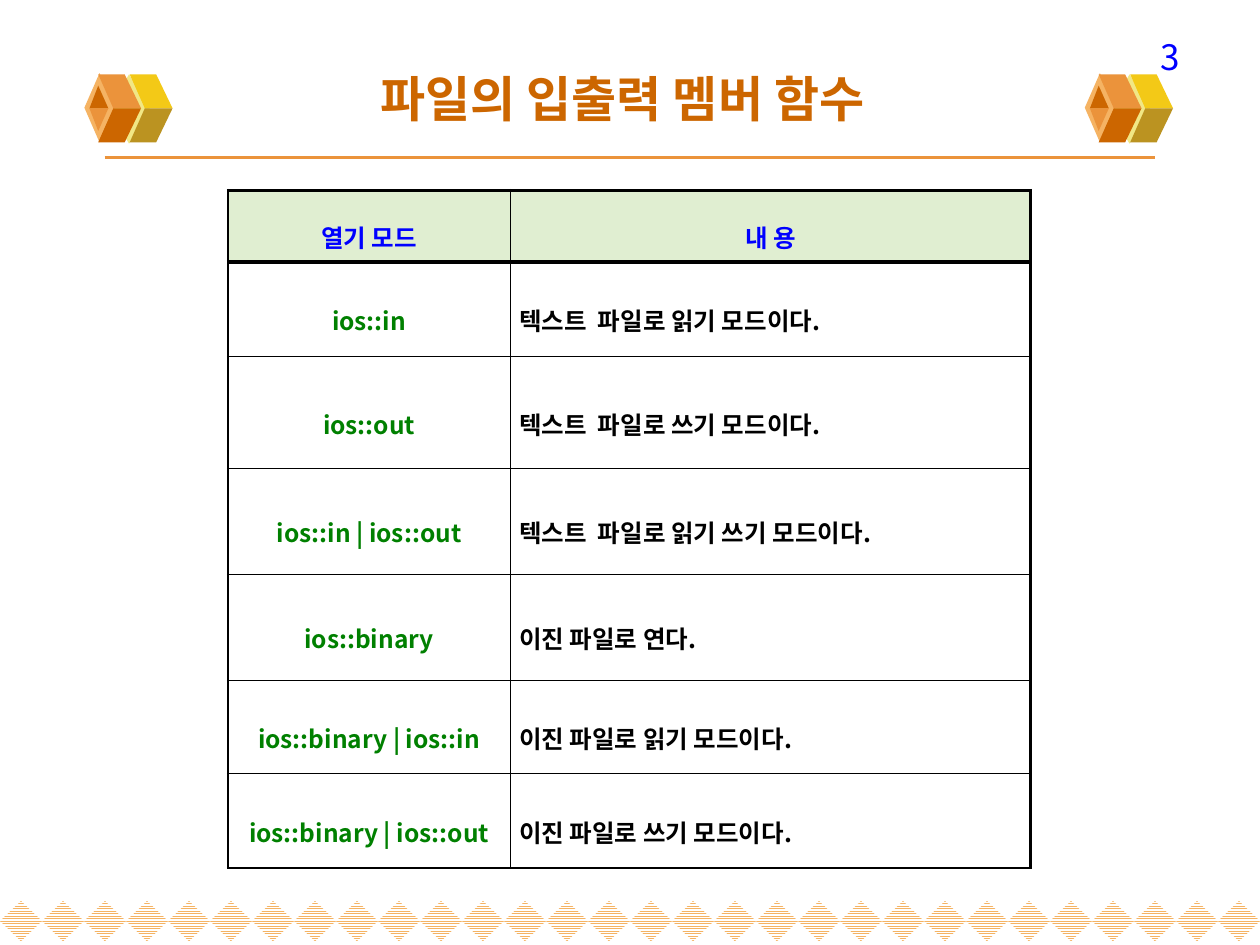
from dataclasses import dataclass

from lxml.etree import SubElement as Sub
from pptx import Presentation
from pptx.dml.color import RGBColor as Rgb
from pptx.enum.dml import MSO_PATTERN as Pat
from pptx.enum.shapes import MSO_CONNECTOR as Conn, MSO_SHAPE as Kind
from pptx.enum.text import MSO_ANCHOR as Anchor, PP_ALIGN as Align
from pptx.oxml.ns import qn
from pptx.util import Inches, Pt


@dataclass(frozen=True)
class Theme:
    face: str = "Noto Sans CJK KR"
    black: str = "000000"
    white: str = "FFFFFF"
    blue: str = "0000FF"
    green: str = "008000"
    mint: str = "E0EED1"
    rust: str = "CC6600"
    orange: str = "EB933B"
    peach: str = "F5B363"
    cream: str = "F1E785"
    yellow: str = "F3C917"
    olive: str = "BB9321"
    title: int = 28
    number: int = 20
    body: int = 14
    rule: float = 2.25
    thin: float = 0.28
    frame: float = 1.7
    head: float = 1.98


class Deck:
    def __init__(self, slide, theme):
        self.slide = slide
        self.shapes = slide.shapes
        self.theme = theme

    def text(self, frame, words, size, color, align, bold=True, space=None):
        para = frame.paragraphs[0]
        para.text = words
        para.alignment = align
        if space:
            para.line_spacing = space
        font = para.font
        font.size = Pt(size)
        font.bold = bold
        font.color.rgb = Rgb.from_string(color)
        font.name = self.theme.face
        props = para._p.pPr.find(qn("a:defRPr"))
        Sub(props, qn("a:ea"), typeface=self.theme.face)

    def label(self, box, words, size, color, align, anchor, bold=True):
        frame = self.shapes.add_textbox(*map(Inches, box)).text_frame
        frame.word_wrap = True
        frame.vertical_anchor = anchor
        frame.margin_top = frame.margin_bottom = 0
        self.text(frame, words, size, color, align, bold)

    def paint(self, shape, color):
        shape.shadow.inherit = False
        shape.line.fill.background()
        shape.fill.solid()
        shape.fill.fore_color.rgb = Rgb.from_string(color)

    def gem(self, box, color):
        shape = self.shapes.add_shape(Kind.DIAMOND, *map(Inches, box))
        self.paint(shape, color)
        return shape

    def weave(self, box):
        fill = self.gem(box, self.theme.peach).fill
        fill.patterned()
        fill.pattern = Pat.NARROW_HORIZONTAL
        fill.fore_color.rgb = Rgb.from_string(self.theme.peach)
        fill.back_color.rgb = Rgb.from_string(self.theme.white)

    def facet(self, left, points, color):
        spots = [(Inches(left + x), Inches(y)) for x, y in points]
        pen = self.shapes.build_freeform(*spots[0])
        pen.add_line_segments(spots[1:], close=True)
        self.paint(pen.convert_to_shape(), color)

    def rule(self, left, right, top):
        line = self.shapes.add_connector(
            Conn.STRAIGHT, Inches(left), Inches(top), Inches(right), Inches(top))
        line.line.color.rgb = Rgb.from_string(self.theme.orange)
        line.line.width = Pt(self.theme.rule)
        Sub(line._element.spPr, qn("a:effectLst"))

    def cube(self, left):
        hue = self.theme
        top, mid, base = 0.59, 0.86, 1.13

        def slant(x, edge, color):
            self.facet(left, [(x + 0.12, mid), (x + 0.34, mid),
                              (x + 0.21, edge), (x, edge)], color)

        def wedge(tip, color):
            self.facet(left, [(0.11, tip), (0.04, mid), (0.19, mid)], color)

        self.gem((left + 0.19, top, 0.33, 0.55), hue.cream)
        slant(0.36, top, hue.yellow)
        slant(0.36, base, hue.olive)
        self.gem((left, 0.58, 0.24, 0.55), hue.peach)
        slant(0.11, top, hue.orange)
        slant(0.11, base, hue.rust)
        wedge(0.68, hue.rust)
        wedge(1.04, hue.orange)

    def border(self, cell, widths):
        props = cell._tc.get_or_add_tcPr()
        for side, width in zip("LRTB", widths):
            line = Sub(props, qn(f"a:ln{side}"), w=str(int(Pt(width))))
            fill = Sub(line, qn("a:solidFill"))
            Sub(fill, qn("a:srgbClr"), val=self.theme.black)

    def cell(self, cell, words, color, align, widths, fill=None):
        self.border(cell, widths)
        if fill:
            cell.fill.solid()
            cell.fill.fore_color.rgb = Rgb.from_string(fill)
        else:
            cell.fill.background()
        cell.vertical_anchor = Anchor.MIDDLE
        cell.margin_left = cell.margin_right = Inches(0.07)
        cell.margin_top = cell.margin_bottom = Inches(0.02)
        self.text(cell.text_frame, words, self.theme.body, color, align, space=1.6)

    def table(self, left, top, cols, highs, rows):
        hue = self.theme
        grid = self.shapes.add_table(
            len(rows), len(cols), Inches(left), Inches(top),
            Inches(sum(cols)), Inches(sum(highs))).table
        grid.first_row = grid.horz_banding = False
        for col, width in zip(grid.columns, cols):
            col.width = Inches(width)
        for row, height in zip(grid.rows, highs):
            row.height = Inches(height)
        flat = [hue.frame, hue.head] + [hue.thin] * (len(rows) - 2) + [hue.frame]
        sides = [hue.frame, hue.thin, hue.frame]
        for r, row in enumerate(rows):
            for c, words in enumerate(row):
                color = hue.blue if r == 0 else (hue.green, hue.black)[c]
                align = Align.JUSTIFY if r and c else Align.CENTER
                widths = sides[c], sides[c + 1], flat[r], flat[r + 1]
                fill = hue.mint if r == 0 else None
                self.cell(grid.cell(r, c), words, color, align, widths, fill)


ROWS = [
    ("열기 모드", "내 용"),
    ("ios::in", "텍스트  파일로 읽기 모드이다."),
    ("ios::out", "텍스트  파일로 쓰기 모드이다."),
    ("ios::in | ios::out", "텍스트  파일로 읽기 쓰기 모드이다."),
    ("ios::binary", "이진 파일로 연다."),
    ("ios::binary | ios::in", "이진 파일로 읽기 모드이다."),
    ("ios::binary | ios::out", "이진 파일로 쓰기 모드이다."),
]
HIGHS = [0.57, 0.75, 0.89, 0.84, 0.84, 0.74, 0.75]


def main():
    show = Presentation()
    show.slide_width, show.slide_height = Inches(10), Inches(7.5)
    theme = Theme()
    deck = Deck(show.slides.add_slide(show.slide_layouts[6]), theme)
    count = 30
    step = 10 / count
    for i in range(count):
        deck.weave((i * step, 7.15, step, 0.32))
    deck.rule(0.83, 9.17, 1.25)
    for left in (0.67, 8.61):
        deck.cube(left)
    deck.label((7.13, 0.28, 2.33, 0.3), "3", theme.number, theme.blue,
               Align.RIGHT, Anchor.TOP, bold=False)
    deck.label((0.44, 0.3, 9, 0.95), "파일의 입출력 멤버 함수", theme.title,
               theme.rust, Align.CENTER, Anchor.MIDDLE)
    deck.table(1.81, 1.51, [2.24, 4.13], HIGHS, ROWS)
    show.save("out.pptx")


if __name__ == "__main__":
    main()
